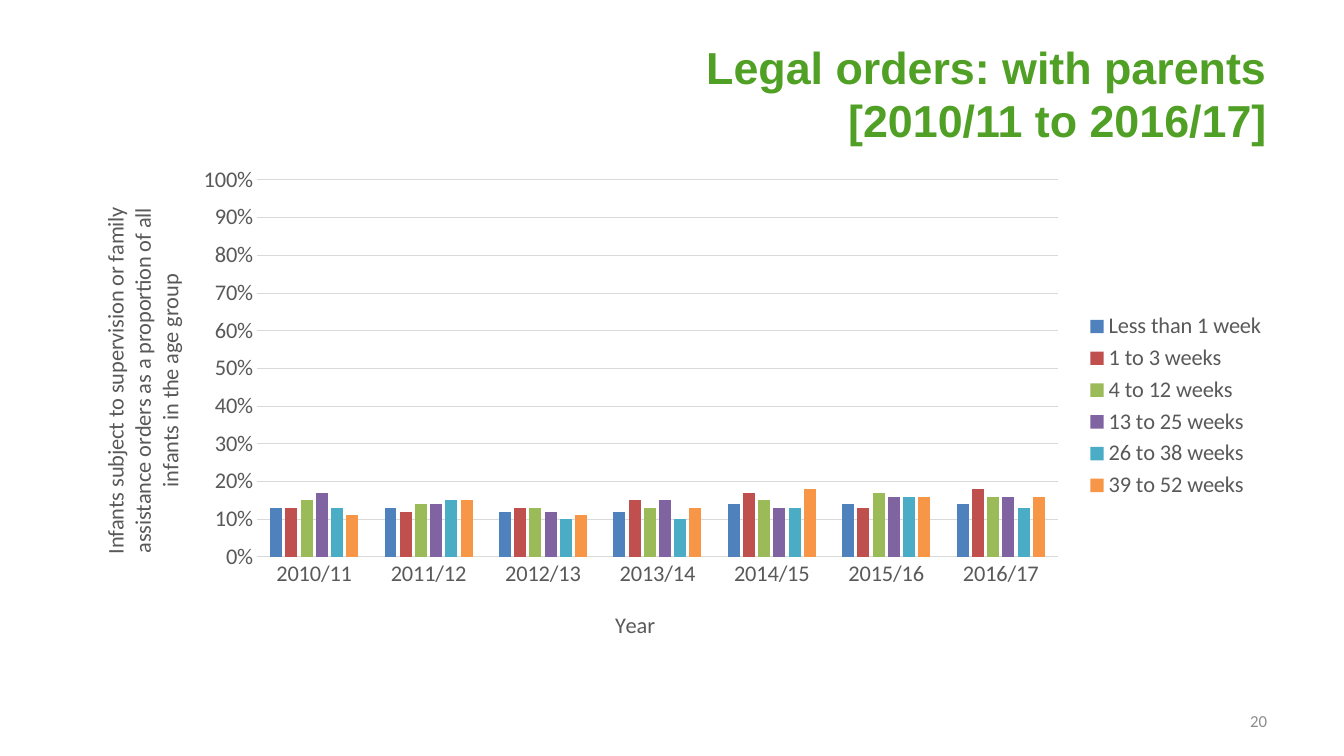
"""Build the slide on legal orders with parents, 2010/11 to 2016/17."""
from lxml import etree
from pptx import Presentation
from pptx import util as u
from pptx.chart.data import CategoryChartData
from pptx.dml.color import RGBColor
from pptx.enum import chart as ce, text
from pptx.oxml.ns import qn

PX = 914400 / 100.8
THEME = {
    "title": {"name": "Arial", "size": u.Pt(32), "bold": True, "color": "51A026"},
    "number": {"name": "Calibri", "size": u.Pt(12), "bold": False, "color": "8C8C8C"},
    "chart": {"name": "Calibri", "size": u.Pt(16), "bold": False, "color": "595959"},
    "line": "D9D9D9",
    "line_width": u.Pt(0.75),
}
CHART = {"x": 67, "y": 156, "w": 1210, "h": 500}


def style(font, look):
    for name, value in look.items():
        if name == "color":
            font.color.rgb = RGBColor.from_string(value)
        else:
            setattr(font, name, value)


def place(element, index, **box):
    for old in element.findall(qn("c:layout")):
        element.remove(old)
    layout = etree.Element(qn("c:layout"))
    element.insert(index, layout)
    manual = etree.SubElement(layout, qn("c:manualLayout"))
    values = {"layoutTarget": "inner"} if "w" in box else {}
    values |= {"xMode": "edge", "yMode": "edge"}
    for key, px in box.items():
        start = CHART[key] if key in "xy" else 0
        values[key] = round((px - start) / CHART["w" if key in "xw" else "h"], 4)
    for tag, value in values.items():
        etree.SubElement(manual, qn(f"c:{tag}")).set("val", str(value))


prs = Presentation()
prs.slide_width, prs.slide_height = u.Emu(round(1344 * PX)), u.Emu(round(756 * PX))
s = prs.slides.add_slide(prs.slide_layouts[6])

texts = [
    ("Legal orders: with parents\v[2010/11 to 2016/17]", (67, 30, 1210, 126), "title"),
    ("20", (964, 701, 313, 40), "number"),
]
for words, box, look in texts:
    sp = s.shapes.add_textbox(*(round(n * PX) for n in box))
    tf = sp.text_frame
    tf.word_wrap = True
    tf.vertical_anchor = text.MSO_ANCHOR.MIDDLE
    p = tf.paragraphs[0]
    p.text = words
    p.alignment = text.PP_ALIGN.RIGHT
    for r in p.runs:
        style(r.font, THEME[look])

ages = [
    ("Less than 1 week", "4F81BD", (0.13, 0.13, 0.12, 0.12, 0.14, 0.14, 0.14)),
    ("1 to 3 weeks", "C0504D", (0.13, 0.12, 0.13, 0.15, 0.17, 0.13, 0.18)),
    ("4 to 12 weeks", "9BBB59", (0.15, 0.14, 0.13, 0.13, 0.15, 0.17, 0.16)),
    ("13 to 25 weeks", "8064A2", (0.17, 0.14, 0.12, 0.15, 0.13, 0.16, 0.16)),
    ("26 to 38 weeks", "4BACC6", (0.13, 0.15, 0.1, 0.1, 0.13, 0.16, 0.13)),
    ("39 to 52 weeks", "F79646", (0.11, 0.15, 0.11, 0.13, 0.18, 0.16, 0.16)),
]
data = CategoryChartData(number_format="0%")
data.categories = [f"{year}/{year % 100 + 1}" for year in range(2010, 2017)]
for age, _, shares in ages:
    data.add_series(age, shares)
chart = s.shapes.add_chart(
    ce.XL_CHART_TYPE.COLUMN_CLUSTERED,
    *(round(n * PX) for n in CHART.values()), data).chart
style(chart.font, THEME["chart"])
chart.has_title = False
chart.has_legend = True
chart.legend.position = ce.XL_LEGEND_POSITION.RIGHT
chart.legend.include_in_layout = False
style(chart.legend.font, THEME["chart"])

plot = chart.plots[0]
plot.gap_width, plot.overlap, plot.vary_by_categories = 219, -27, False
for series, (_, color, _) in zip(plot.series, ages):
    series.format.fill.solid()
    series.format.fill.fore_color.rgb = RGBColor.from_string(color)

year_axis, share_axis = chart.category_axis, chart.value_axis
axes = [
    (year_axis, "Year", 0, {"x": 611, "y": 606}),
    (share_axis, "Infants subject to supervision or family assistance orders "
     "as a proportion of all infants in the age group", -90, {"x": 96, "y": 203}),
]
for axis, words, angle, corner in axes:
    axis.major_tick_mark = axis.minor_tick_mark = ce.XL_TICK_MARK.NONE
    style(axis.tick_labels.font, THEME["chart"])
    tf = axis.axis_title.text_frame
    tf.text = words
    style(tf.paragraphs[0].runs[0].font, THEME["chart"])
    body = axis.axis_title._element.find(".//" + qn("a:bodyPr"))
    body.set("rot", str(angle * 60000))
    body.set("vert", "horz")
    place(axis.axis_title._element, 1, **corner)

share_axis.minimum_scale, share_axis.maximum_scale, share_axis.major_unit = 0, 1, 0.1
share_axis.tick_labels.number_format = "0%"
share_axis.tick_labels.number_format_is_linked = False
share_axis.format.line.fill.background()
for line in (year_axis.format.line, share_axis.major_gridlines.format.line):
    line.color.rgb = RGBColor.from_string(THEME["line"])
    line.width = THEME["line_width"]
place(chart._chartSpace.find(".//" + qn("c:plotArea")), 0, x=257, y=180, w=801, h=377)

prs.save("out.pptx")
